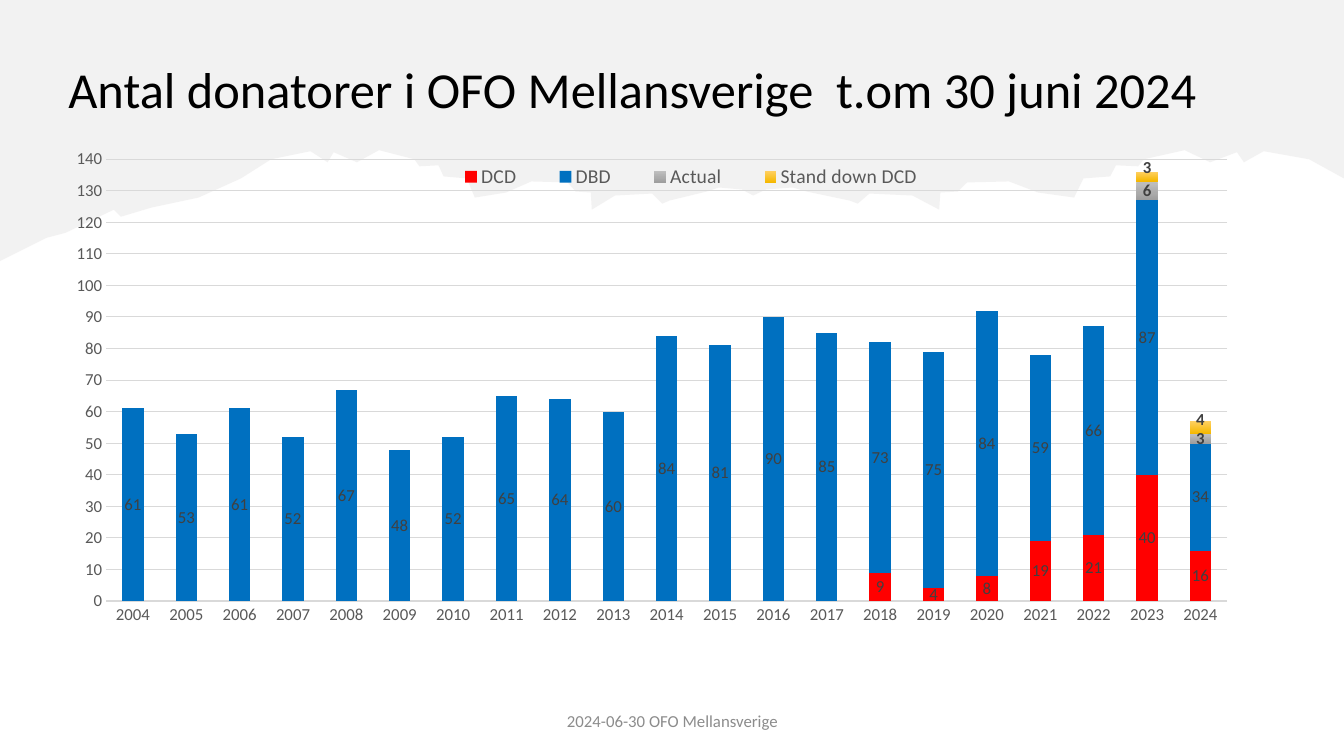
import pptx
import pptx.chart.data
import pptx.dml.color
import pptx.enum.chart
import pptx.enum.text
import pptx.oxml
import pptx.oxml.ns
import pptx.util
from pptx.util import Inches

RGBColor = pptx.dml.color.RGBColor
BLACK = RGBColor(0x00, 0x00, 0x00)
TORN_GRAY = RGBColor(0xE7, 0xE6, 0xE6)
FOOTER_GRAY = RGBColor(0x8C, 0x8C, 0x8C)
AXIS_GRAY = RGBColor(0x59, 0x59, 0x59)
GRID_GRAY = RGBColor(0xD9, 0xD9, 0xD9)
LABEL_GRAY = RGBColor(0x40, 0x40, 0x40)
RED = RGBColor(0xFF, 0x00, 0x00)
BLUE = RGBColor(0x00, 0x70, 0xC0)
SILVER = (RGBColor(0xC0, 0xC0, 0xC0), RGBColor(0x9E, 0x9E, 0x9E))
GOLD = (RGBColor(0xFF, 0xD0, 0x63), RGBColor(0xF5, 0xB8, 0x00))
FONT_NAME = "Calibri"
SLIDE_WIDTH = 13.33
SLIDE_HEIGHT = 7.5

LEFT_SLOPE = [(0, 2.59), (0.46, 2.36), (0.65, 2.31), (1.13, 2.08), (1.2, 2.15),
              (1.5, 2.06), (1.97, 1.96)]
HIGH_RIDGE = [(2.39, 1.77), (2.69, 1.58), (3.08, 1.5), (3.25, 1.61), (3.31, 1.51),
              (3.54, 1.61), (3.76, 1.49), (4.11, 1.58)]
STEPS_DOWN = [(4.16, 1.65), (4.35, 1.64), (4.4, 1.75), (4.63, 1.77), (4.71, 1.96),
              (5.02, 1.91), (5.27, 1.8), (5.63, 1.81), (5.71, 1.9), (5.86, 1.91)]
LOW_RIDGE = [(5.87, 2.08), (6.1, 1.94), (6.47, 1.92), (6.57, 2.02), (6.64, 1.99),
             (7.01, 1.9), (7.13, 1.86), (7.36, 1.88)]
RIDGE_MIDDLE = (7.47, 1.94)

YEARS = [str(year) for year in range(2004, 2025)]
CENTER = pptx.enum.chart.XL_LABEL_POSITION.CENTER
INSIDE_BASE = pptx.enum.chart.XL_LABEL_POSITION.INSIDE_BASE
DONOR_SERIES = [
    ("DCD", [9, 4, 8, 19, 21, 40, 16], RED, CENTER, False),
    ("DBD", [61, 53, 61, 52, 67, 48, 52, 65, 64, 60, 84, 81, 90, 85,
             73, 75, 84, 59, 66, 87, 34], BLUE, CENTER, False),
    ("Actual", [6, 3], SILVER, CENTER, True),
    ("Stand down DCD", [3, 4], GOLD, INSIDE_BASE, True),
]


def style_font(font, size, color, bold=False):
    """Apply the slide's typeface with a size, colour and weight."""
    font.name = FONT_NAME
    font.size = pptx.util.Pt(size)
    font.color.rgb = color
    font.bold = bold


def torn_edge(width):
    """Return the edge: the left ridge, then its mirror stretched to the given width."""
    left_ridge = HIGH_RIDGE + STEPS_DOWN + LOW_RIDGE
    middle = RIDGE_MIDDLE[0]
    stretch = (width - middle) / (middle - left_ridge[0][0])
    right_ridge = [(middle + stretch * (middle - x), y) for x, y in reversed(left_ridge)]
    return LEFT_SLOPE + left_ridge + [RIDGE_MIDDLE] + right_ridge


def add_torn_background(slide, left, top, width):
    """Draw the half-transparent torn band from its upper left corner across a width."""
    outline = [(0, 0)] + torn_edge(width) + [(width, 0)]
    points = [(Inches(left + x), Inches(top + y)) for x, y in outline]
    builder = slide.shapes.build_freeform(*points[0])
    builder.add_line_segments(points[1:], close=True)
    band = builder.convert_to_shape()
    band.shadow.inherit = False
    band.line.fill.background()
    band.fill.solid()
    band.fill.fore_color.rgb = TORN_GRAY
    fill_color = band._element.spPr.find(".//" + pptx.oxml.ns.qn("a:srgbClr"))
    fill_color.append(pptx.oxml.parse_xml(
        f'<a:alpha {pptx.oxml.ns.nsdecls("a")} val="50000"/>'))


def add_text(slide, box, text, size, color, alignment, space_after=0, line_spacing=1.0):
    """Add one vertically centred paragraph in the given box."""
    text_frame = slide.shapes.add_textbox(*map(Inches, box)).text_frame
    text_frame.word_wrap = True
    text_frame.vertical_anchor = pptx.enum.text.MSO_ANCHOR.MIDDLE
    text_frame.text = text
    paragraph = text_frame.paragraphs[0]
    paragraph.alignment = alignment
    paragraph.space_after = pptx.util.Pt(space_after)
    paragraph.line_spacing = line_spacing
    style_font(paragraph.runs[0].font, size, color)


def set_layout(element, index, x, y, width, height, target=""):
    """Place a chart part by fractions of the chart's box."""
    for old_layout in element.findall(pptx.oxml.ns.qn("c:layout")):
        element.remove(old_layout)
    element.insert(index, pptx.oxml.parse_xml(
        f'<c:layout {pptx.oxml.ns.nsdecls("c")}><c:manualLayout>{target}'
        f'<c:xMode val="edge"/><c:yMode val="edge"/><c:x val="{x}"/><c:y val="{y}"/>'
        f'<c:w val="{width}"/><c:h val="{height}"/></c:manualLayout></c:layout>'))


def style_series(series, color, position, bold):
    """Fill a series plainly or with a vertical gradient and label its values."""
    fill = series.format.fill
    if isinstance(color, RGBColor):
        fill.solid()
        fill.fore_color.rgb = color
    else:
        fill.gradient()
        fill.gradient_angle = 270
        for stop, stop_color in zip(fill.gradient_stops, color):
            stop.color.rgb = stop_color
    labels = series.data_labels
    labels.show_value = True
    labels.position = position
    style_font(labels.font, 12, LABEL_GRAY, bold)


def style_axes(chart):
    """Set scale, gridlines and fonts of both axes."""
    for axis in (chart.category_axis, chart.value_axis):
        axis.major_tick_mark = pptx.enum.chart.XL_TICK_MARK.NONE
        axis.minor_tick_mark = pptx.enum.chart.XL_TICK_MARK.NONE
        style_font(axis.tick_labels.font, 12, AXIS_GRAY)
    value_axis = chart.value_axis
    value_axis.minimum_scale = 0
    value_axis.maximum_scale = 140
    value_axis.major_unit = 10
    value_axis.format.line.fill.background()
    for line_owner, points in ((chart.category_axis, 1), (value_axis.major_gridlines, 0.75)):
        line_owner.format.line.color.rgb = GRID_GRAY
        line_owner.format.line.width = pptx.util.Pt(points)


def add_legend(chart):
    """Lay the legend over the top of the plot."""
    chart.has_legend = True
    legend = chart.legend
    legend.position = pptx.enum.chart.XL_LEGEND_POSITION.TOP
    legend.include_in_layout = False
    style_font(legend.font, 14, AXIS_GRAY)
    set_layout(legend._element, 1, 0.31, 0.05, 0.44, 0.07)


def add_donor_chart(slide, box):
    """Add the stacked columns of donors per year in the given box."""
    chart_data = pptx.chart.data.CategoryChartData()
    chart_data.categories = YEARS
    for name, values, *_ in DONOR_SERIES:
        years_without_data = [None] * (len(YEARS) - len(values))
        chart_data.add_series(name, years_without_data + values)
    chart = slide.shapes.add_chart(
        pptx.enum.chart.XL_CHART_TYPE.COLUMN_STACKED,
        *map(Inches, box), chart_data).chart
    style_font(chart.font, 10, BLACK)
    chart.has_title = False
    plot = chart.plots[0]
    plot.gap_width = 150
    plot.overlap = 100
    plot.vary_by_categories = False
    for series, (_, _, color, position, bold) in zip(plot.series, DONOR_SERIES):
        style_series(series, color, position, bold)
    style_axes(chart)
    add_legend(chart)
    plot_area = chart._chartSpace.chart.plotArea
    set_layout(plot_area, 0, 0.04, 0.053, 0.939, 0.803, '<c:layoutTarget val="inner"/>')


def build_donor_slide(presentation):
    """Build the slide with title, chart and footer on a torn background."""
    slide = presentation.slides.add_slide(presentation.slide_layouts[6])
    alignments = pptx.enum.text.PP_ALIGN
    add_torn_background(slide, 0, 0, SLIDE_WIDTH)
    add_text(slide, (0.58, 0.41, 12.34, 1.01),
             "Antal donatorer i OFO Mellansverige  t.om 30 juni 2024",
             36, BLACK, alignments.LEFT, line_spacing=0.9)
    add_text(slide, (4.42, 6.95, 4.5, 0.4), "2024-06-30 OFO Mellansverige",
             12, FOOTER_GRAY, alignments.CENTER, space_after=6)
    add_donor_chart(slide, (0.58, 1.29, 11.84, 5.46))


def main():
    """Create the presentation and save it."""
    presentation = pptx.Presentation()
    presentation.slide_width = Inches(SLIDE_WIDTH)
    presentation.slide_height = Inches(SLIDE_HEIGHT)
    build_donor_slide(presentation)
    presentation.save("out.pptx")


if __name__ == "__main__":
    main()
